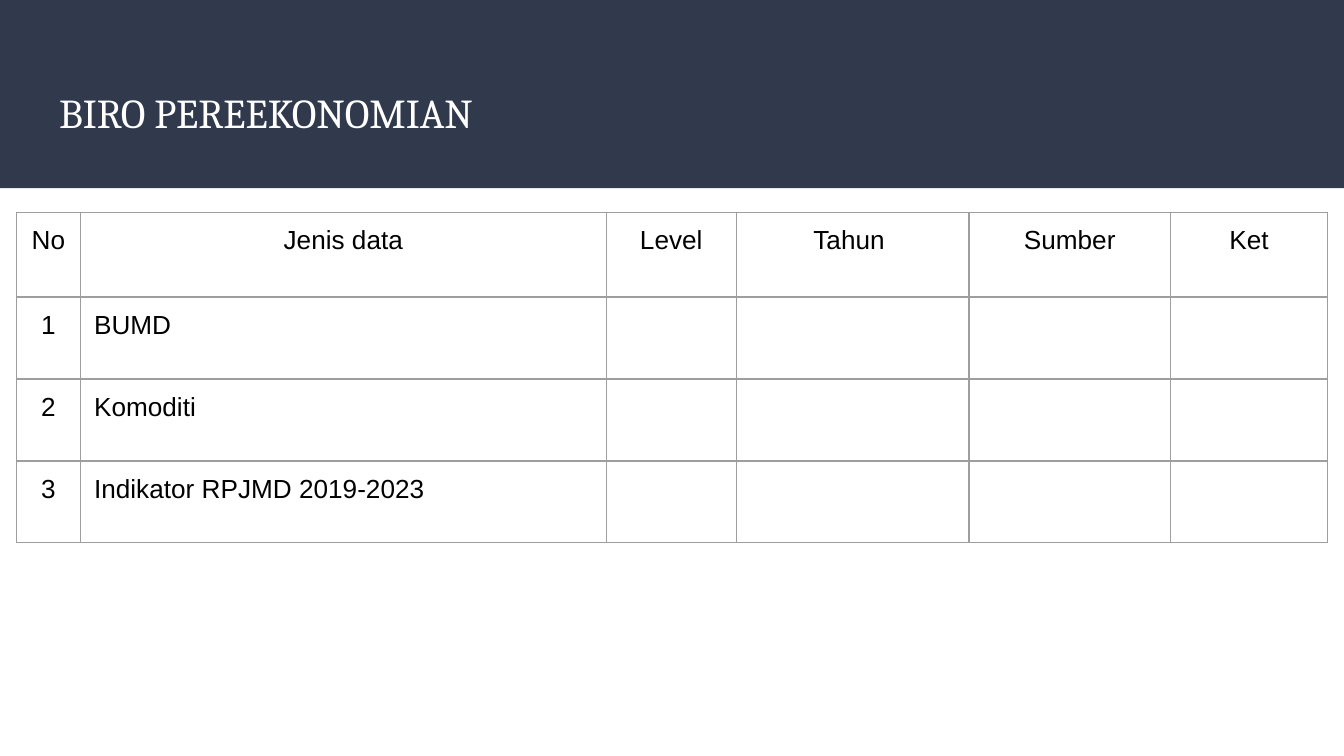
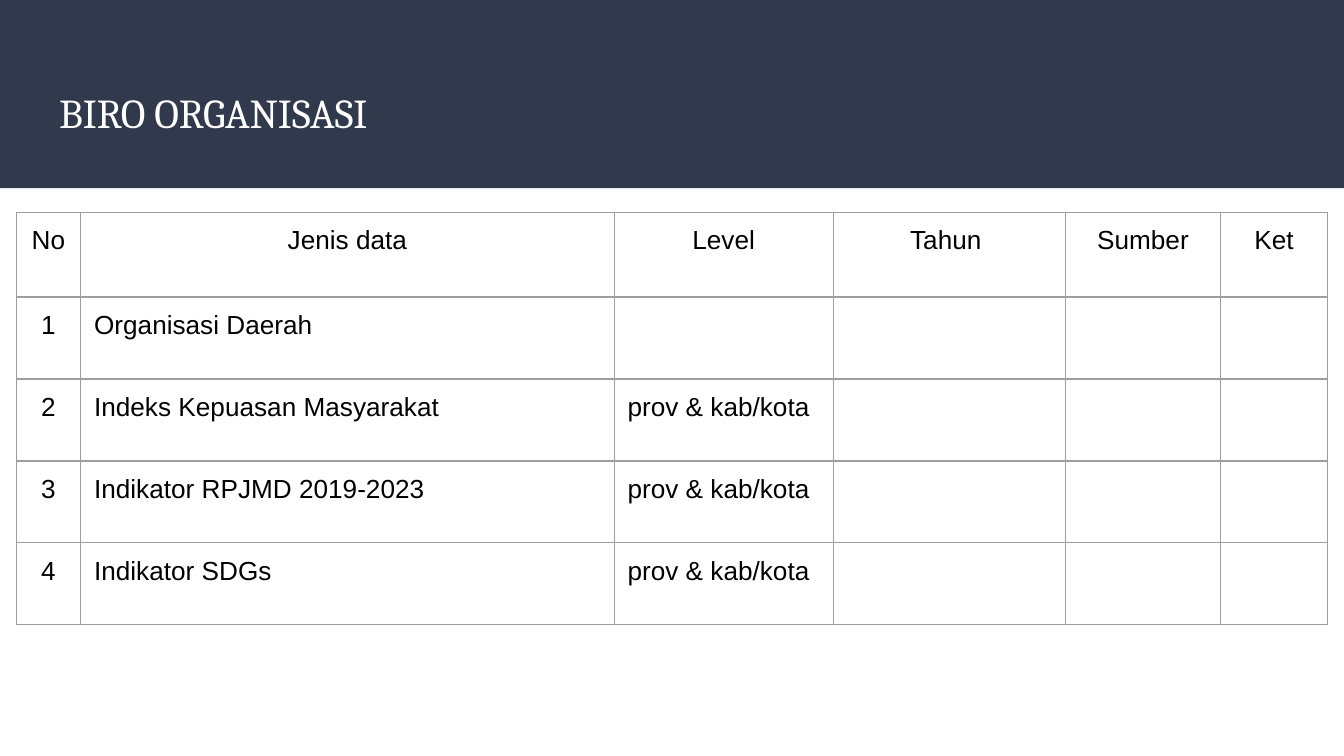
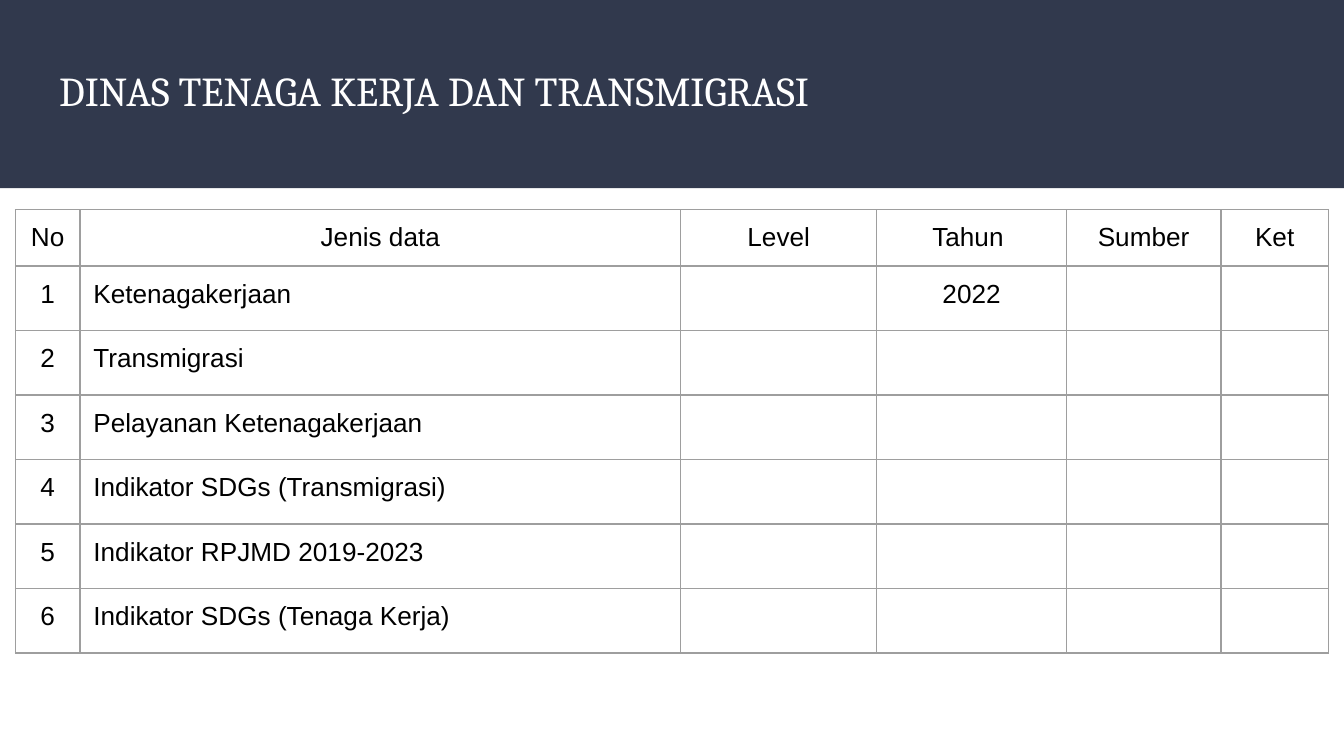
from lxml.etree import SubElement as Sub
from pptx import Presentation
from pptx.dml.color import RGBColor as RGB
from pptx.enum.shapes import MSO_SHAPE as Kind
from pptx.enum.text import MSO_ANCHOR as Anchor, PP_ALIGN as Align
from pptx.oxml.ns import qn
from pptx.util import Inches, Pt

WIDE = 10
HIGH = WIDE * 9 / 16
COLORS = {"band": "31394D", "title": "FFFFFF", "text": "000000", "grid": "9E9E9E"}
TITLE = {"name": "Cambria", "size": Pt(22), "bold": False}
BODY = {"name": "Arial", "size": Pt(14), "bold": False}
MARGINS = {f"margin_{side}": Inches(0.1) for side in ("left", "top", "right", "bottom")}
HEADS = ["No", "Jenis data", "Level", "Tahun ", "Sumber", "Ket"]
CENTRED = {"No", "Tahun "}
AREA = "prov & kab/kota"

# Each row of data holds the cells after the number.
PAGES = [
    {
        "title": "BIRO PEREEKONOMIAN", "drop": 0.55, "top": 1.58,
        "cols": [0.48, 3.91, 0.97, 1.73, 1.5, 1.17], "head": 0.63, "row": 0.61,
        "data": [["BUMD"], ["Komoditi"], ["Indikator RPJMD 2019-2023"]],
    },
    {
        "title": "BIRO ORGANISASI", "drop": 0.55, "top": 1.58,
        "cols": [0.48, 3.97, 1.63, 1.73, 1.15, 0.8], "head": 0.63, "row": 0.61,
        "data": [
            ["Organisasi Daerah"],
            ["Indeks Kepuasan Masyarakat", AREA],
            ["Indikator RPJMD 2019-2023", AREA],
            ["Indikator SDGs", AREA],
        ],
    },
    {
        "title": "DINAS TENAGA KERJA DAN TRANSMIGRASI", "drop": 0.39, "top": 1.56,
        "cols": [0.48, 4.47, 1.46, 1.41, 1.15, 0.8], "head": 0.41, "row": 0.48,
        "data": [
            ["Ketenagakerjaan", "", "2022"],
            ["Transmigrasi"],
            ["Pelayanan Ketenagakerjaan"],
            ["Indikator SDGs (Transmigrasi)"],
            ["Indikator RPJMD 2019-2023"],
            ["Indikator SDGs (Tenaga Kerja)"],
        ],
    },
]


def apply(target, values):
    for name, value in values.items():
        setattr(target, name, value)


def style(font, look, color):
    apply(font, look)
    font.color.rgb = RGB.from_string(COLORS[color])


def add_band(slide):
    """Draw the top band and move it to the layout that all slides share."""
    band = slide.shapes.add_shape(Kind.RECTANGLE, 0, 0, Inches(WIDE), Inches(1.4))
    band.shadow.inherit = False
    band.fill.solid()
    band.fill.fore_color.rgb = RGB.from_string(COLORS["band"])
    band.line.fill.background()
    slide.slide_layout.shapes._spTree.insert(2, band._element)


def set_title(slide, text, box):
    title = slide.shapes.title
    apply(title, dict(zip(("left", "top", "width", "height"), map(Inches, box))))
    frame = title.text_frame
    apply(frame, MARGINS | {"vertical_anchor": Anchor.TOP, "word_wrap": True})
    frame.text = text
    line = frame.paragraphs[0]
    line.alignment = Align.LEFT
    style(line.runs[0].font, TITLE, "title")


def set_cell(cell, text, align):
    apply(cell, MARGINS)
    props = cell._tc.get_or_add_tcPr()
    for side in ("lnL", "lnR", "lnT", "lnB"):
        edge = Sub(props, qn(f"a:{side}"), w=str(Pt(0.75)))
        Sub(Sub(edge, qn("a:solidFill")), qn("a:srgbClr"), val=COLORS["grid"])
    cell.fill.background()
    line = cell.text_frame.paragraphs[0]
    if text:
        line.alignment = align
        run = line.add_run()
        run.text = text
        style(run.font, BODY, "text")
    else:
        # An empty cell takes its line height from the end mark.
        Sub(line._p, qn("a:endParaRPr"), sz=str(int(BODY["size"].pt * 100)))


def add_grid(slide, page):
    """Centre the numbered data table below the band."""
    rows = [HEADS] + [[str(n), *row] for n, row in enumerate(page["data"], 1)]
    sizes = [page["head"]] + [page["row"]] * len(page["data"])
    width = sum(page["cols"])
    box = ((WIDE - width) / 2, page["top"], width, sum(sizes))
    table = slide.shapes.add_table(len(rows), len(HEADS), *map(Inches, box)).table
    apply(table, {"first_row": False, "horz_banding": False})
    for col, span in zip(table.columns, page["cols"]):
        col.width = Inches(span)
    for r, (row, size) in enumerate(zip(rows, sizes)):
        table.rows[r].height = Inches(size)
        for c, head in enumerate(HEADS):
            align = Align.CENTER if r == 0 or head in CENTRED else Align.LEFT
            set_cell(table.cell(r, c), row[c] if c < len(row) else "", align)


def main():
    deck = Presentation()
    apply(deck, {"slide_width": Inches(WIDE), "slide_height": Inches(HIGH)})
    for n, page in enumerate(PAGES):
        slide = deck.slides.add_slide(deck.slide_layouts[5])
        if n == 0:
            add_band(slide)
        set_title(slide, page["title"], (0.34, page["drop"], WIDE - 0.68, 0.68))
        add_grid(slide, page)
    deck.save("out.pptx")


if __name__ == "__main__":
    main()
